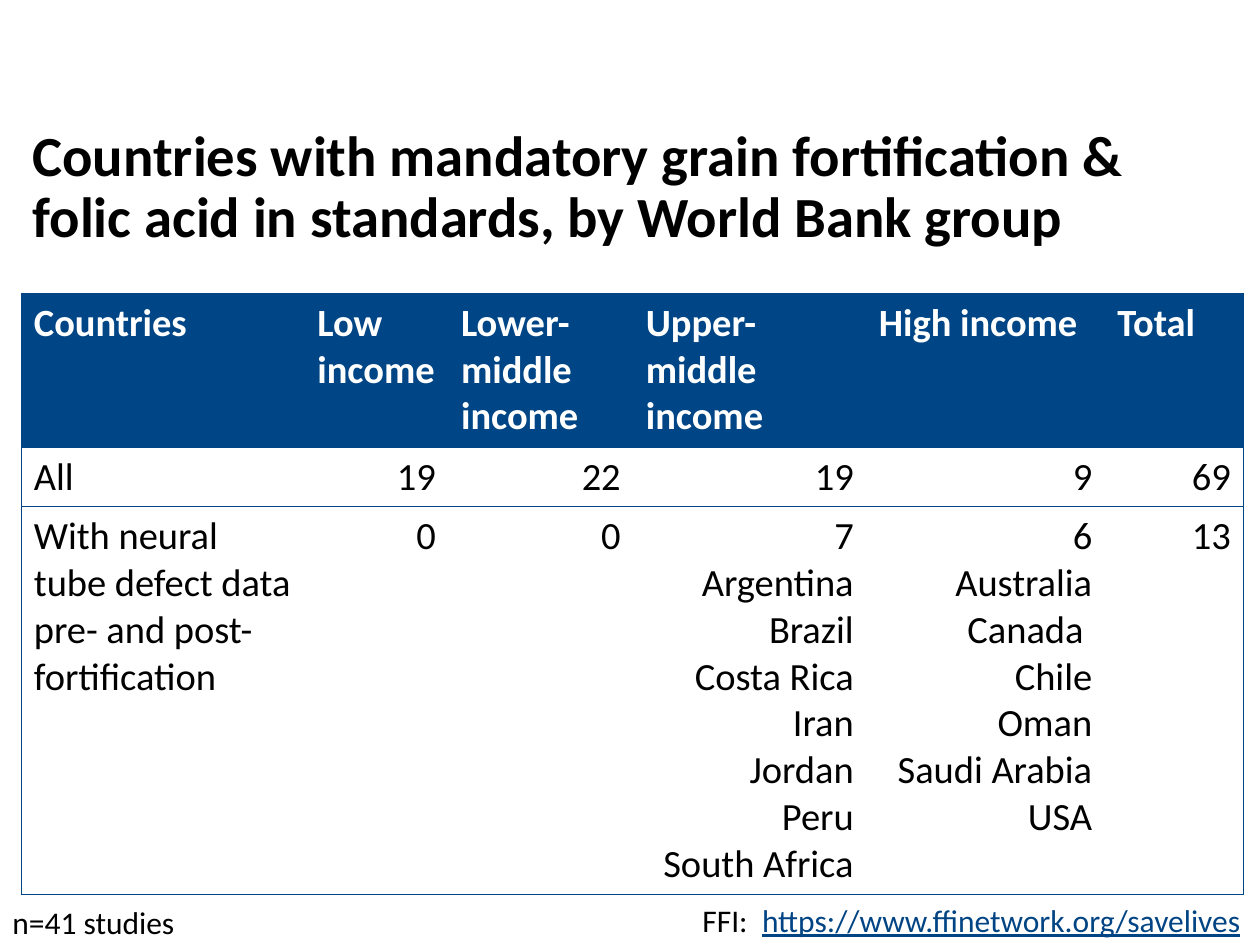
from lxml import etree
from pptx import Presentation
from pptx.dml.color import RGBColor
from pptx.enum.text import MSO_ANCHOR, PP_ALIGN
from pptx.oxml.ns import qn
from pptx.util import Pt

LEFT, RIGHT = PP_ALIGN.LEFT, PP_ALIGN.RIGHT
MIDDLE = MSO_ANCHOR.MIDDLE
BLUE, BLACK, WHITE = "004585", "000000", "FFFFFF"
LINK = "004484"


def color(value):
    return RGBColor.from_string(value)


def add_span(para, text, size, ink, bold=False, underline=False):
    span = para.add_run()
    span.text = text
    span.font.name = "Calibri"
    span.font.size = Pt(size)
    span.font.bold = bold
    span.font.underline = underline
    span.font.color.rgb = color(ink)


deck = Presentation()
deck.slide_width, deck.slide_height = Pt(720), Pt(540)
page = deck.slides.add_slide(deck.slide_layouts[6])

rows = [
    ["Countries", "Low income", "Lower-middle income", "Upper-middle income", "High income", "Total"],
    ["All", "19", "22", "19", "9", "69"],
    [
        "With neural tube defect data pre- and post-fortification",
        "0",
        "0",
        "7\nArgentina\nBrazil\nCosta Rica\nIran\nJordan\nPeru\nSouth Africa",
        "6\nAustralia\nCanada \nChile\nOman\nSaudi Arabia\nUSA",
        "13",
    ],
]
widths = [162, 82.1, 105.6, 133.2, 136.3, 79.2]
heights = [88, 34, 221]

table = page.shapes.add_table(
    len(rows), len(widths), Pt(12.2), Pt(167.6), Pt(sum(widths)), Pt(sum(heights))
).table
for column, width in zip(table.columns, widths):
    column.width = Pt(width)
for row, height in zip(table.rows, heights):
    row.height = Pt(height)

for r, texts in enumerate(rows):
    header = r == 0
    for c, text in enumerate(texts):
        cell = table.cell(r, c)
        cell.fill.solid()
        cell.fill.fore_color.rgb = color(BLUE if header else WHITE)
        for i, line in enumerate(text.split("\n")):
            para = cell.text_frame.add_paragraph() if i else cell.text_frame.paragraphs[0]
            para.alignment = LEFT if header or c == 0 else RIGHT
            add_span(para, line, 22, WHITE if header else BLACK, bold=header)

        properties = cell._tc.get_or_add_tcPr()
        edges = {"L": c == 0, "R": c == len(widths) - 1, "T": True, "B": True}
        for i, (side, drawn) in enumerate(edges.items()):
            border = etree.Element(qn(f"a:ln{side}"), w=str(Pt(0.5)))
            if drawn:
                fill = etree.SubElement(border, qn("a:solidFill"))
                etree.SubElement(fill, qn("a:srgbClr"), val=BLUE)
            else:
                etree.SubElement(border, qn("a:noFill"))
            properties.insert(i, border)

title = page.shapes.add_textbox(Pt(11.5), Pt(68.4), Pt(697), Pt(78.5)).text_frame
title.word_wrap = True
title.vertical_anchor = MIDDLE
para = title.paragraphs[0]
para.line_spacing = 0.9
add_span(
    para,
    "Countries with mandatory grain fortification & folic acid in standards, by World Bank group",
    32.4,
    BLACK,
    bold=True,
)

source = page.shapes.add_textbox(Pt(185.8), Pt(511.2), Pt(534.2), Pt(28.8)).text_frame
source.word_wrap = True
para = source.paragraphs[0]
para.alignment = RIGHT
add_span(para, "FFI:  ", 18, BLACK)
add_span(para, "https://www.ffinetwork.org/savelives", 18, LINK, underline=True)
add_span(para, " ", 18, BLACK)

note = page.shapes.add_textbox(Pt(0), Pt(512.6), Pt(145.4), Pt(28.8)).text_frame
note.word_wrap = True
add_span(note.paragraphs[0], "n=41 studies", 18, BLACK)

deck.save("out.pptx")
